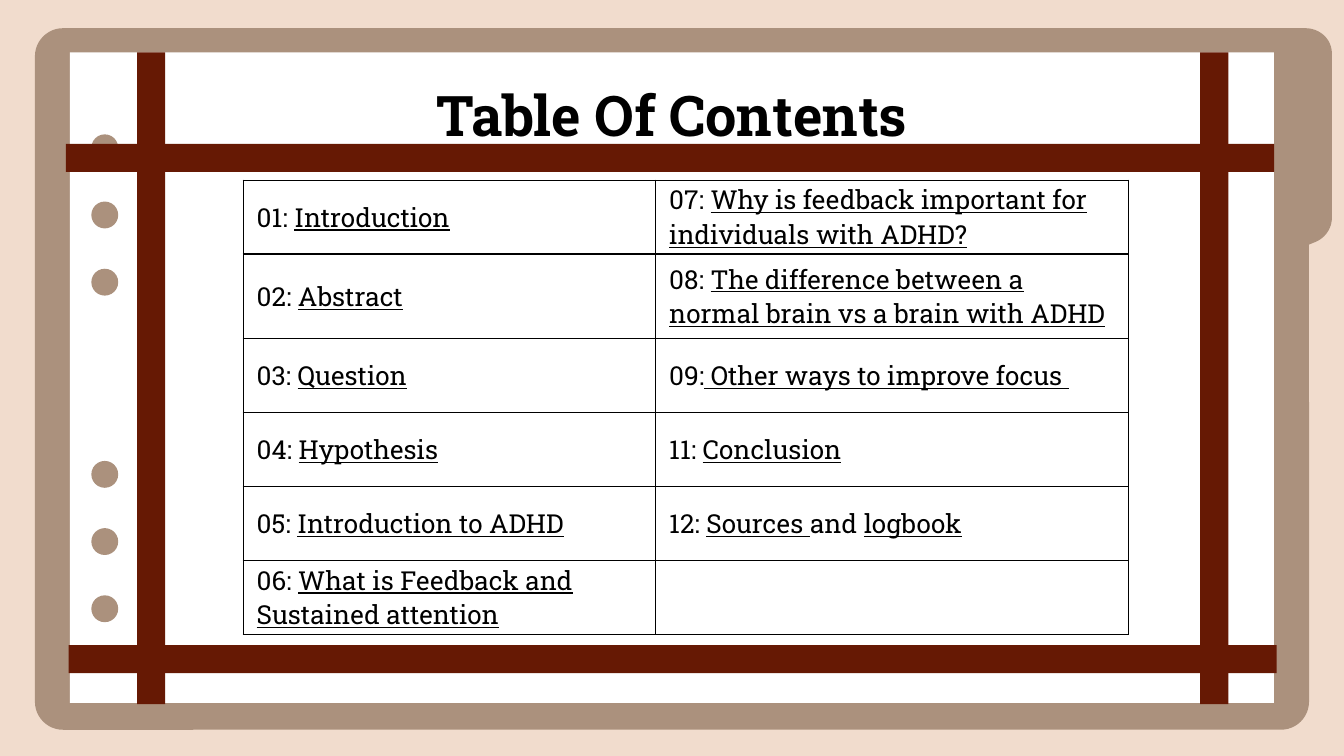
from lxml import etree
from pptx import Presentation
from pptx import util as u
from pptx.dml.color import RGBColor
from pptx.enum import shapes, text
from pptx.oxml import ns

PEACH = RGBColor(0xF1, 0xDC, 0xCD)
TAN = RGBColor(0xAB, 0x91, 0x7D)
WHITE = RGBColor(0xFF, 0xFF, 0xFF)
BROWN = RGBColor(0x66, 0x19, 0x04)
BLACK = RGBColor(0, 0, 0)
KIND = shapes.MSO_SHAPE

TOPICS = [
    ("01: _Introduction", "07: _Why is feedback important for individuals with ADHD?"),
    ("02: _Abstract", "08: _The difference between a normal brain vs a brain with ADHD"),
    ("03: _Question", "09:_ Other ways to improve focus "),
    ("04: _Hypothesis", "11: _Conclusion"),
    ("05: _Introduction to ADHD", "12: _Sources _and _logbook"),
    ("06: _What is Feedback and Sustained attention", ""),
]


def curve(a, b, c, d, steps=12):
    for i in range(1, steps + 1):
        t = i / steps
        s = 1 - t
        yield tuple(s**3 * p + 3 * s * s * t * q + 3 * s * t * t * r + t**3 * e
                    for p, q, r, e in zip(a, b, c, d))


class Deck:
    font = "Roboto Slab"

    def __init__(self, slide):
        self.slide = slide
        fill = slide.background.fill
        fill.solid()
        fill.fore_color.rgb = PEACH

    def paint(self, shape, color):
        shape.shadow.inherit = False
        shape.fill.solid()
        shape.fill.fore_color.rgb = color
        shape.line.fill.background()
        return shape

    def block(self, kind, x, y, w, h, color):
        box = map(u.Inches, (x, y, w, h))
        return self.paint(self.slide.shapes.add_shape(kind, *box), color)

    def free(self, points, color):
        first, *rest = [(u.Inches(x), u.Inches(y)) for x, y in points]
        form = self.slide.shapes.build_freeform(*first)
        form.add_line_segments(rest, close=True)
        return self.paint(form.convert_to_shape(), color)

    def style(self, run, size, bold=False, under=False):
        font = run.font
        font.name = self.font
        font.size = u.Pt(size)
        font.bold = bold
        font.underline = under
        font.color.rgb = BLACK

    def title(self, words, x, y, w, h):
        frame = self.slide.shapes.add_textbox(*map(u.Inches, (x, y, w, h))).text_frame
        frame.word_wrap = True
        frame.vertical_anchor = text.MSO_ANCHOR.TOP
        frame.margin_top = frame.margin_bottom = u.Inches(0.1)
        frame.text = words
        line = frame.paragraphs[0]
        line.alignment = text.PP_ALIGN.CENTER
        self.style(line.runs[0], 30, bold=True)

    def border(self, cell):
        props = cell._tc.get_or_add_tcPr()
        for i, side in enumerate(("lnL", "lnR", "lnT", "lnB")):
            edge = etree.Element(ns.qn("a:" + side), w=str(u.Pt(0.75)))
            fill = etree.SubElement(edge, ns.qn("a:solidFill"))
            etree.SubElement(fill, ns.qn("a:srgbClr"), val=str(BLACK))
            props.insert(i, edge)

    def cell(self, cell, words):
        cell.fill.background()
        self.border(cell)
        cell.vertical_anchor = text.MSO_ANCHOR.MIDDLE
        cell.margin_left = cell.margin_right = u.Inches(0.1)
        cell.margin_top = cell.margin_bottom = 0
        line = cell.text_frame.paragraphs[0]
        for i, part in enumerate(words.split("_")):
            run = line.add_run()
            run.text = part
            self.style(run, 14, under=i % 2 == 1)

    def table(self, rows, x, y, widths, heights):
        box = map(u.Inches, (x, y, sum(widths), sum(heights)))
        grid = self.slide.shapes.add_table(len(rows), len(widths), *box).table
        grid.first_row = grid.horz_banding = False
        for col, width in zip(grid.columns, widths):
            col.width = u.Inches(width)
        for row, height, words in zip(grid.rows, heights, rows):
            row.height = u.Inches(height)
            for cell, entry in zip(row.cells, words):
                self.cell(cell, entry)


def main():
    prs = Presentation()
    prs.slide_width = u.Inches(10)
    prs.slide_height = prs.slide_width * 9 // 16
    deck = Deck(prs.slides.add_slide(prs.slide_layouts[6]))

    cover = deck.block(KIND.ROUNDED_RECTANGLE, 0.26, 0.21, 9.48, 5.22, TAN)
    cover.adjustments[0] = 0.04
    tab = [(9.42, 0.21), (9.42, 1.95), (9.79, 1.8)]
    tab += curve((9.79, 1.8), (9.86, 1.77), (9.91, 1.7), (9.91, 1.62))
    tab.append((9.91, 0.4))
    tab += curve((9.91, 0.4), (9.91, 0.29), (9.82, 0.21), (9.71, 0.21))
    deck.free(tab, TAN)

    deck.block(KIND.RECTANGLE, 0.52, 0.39, 8.96, 4.84, WHITE)
    for top in (1, 3.43):
        for i in range(3):
            deck.block(KIND.OVAL, 0.68, top + 0.5 * i, 0.2, 0.2, TAN)

    deck.title("Table Of Contents", 0.96, 0.5, 8.08, 0.6)
    deck.table(TOPICS, 1.81, 1.34, (3.07, 3.52), (0.55, 0.63) + (0.55,) * 4)

    for x in (8.93, 1.02):
        deck.block(KIND.RECTANGLE, x, 0.39, 0.21, 4.85, BROWN)
    for x, y in ((0.49, 1.07), (0.51, 4.8)):
        deck.block(KIND.RECTANGLE, x, y, 8.99, 0.21, BROWN)
    prs.save("out.pptx")


if __name__ == "__main__":
    main()
